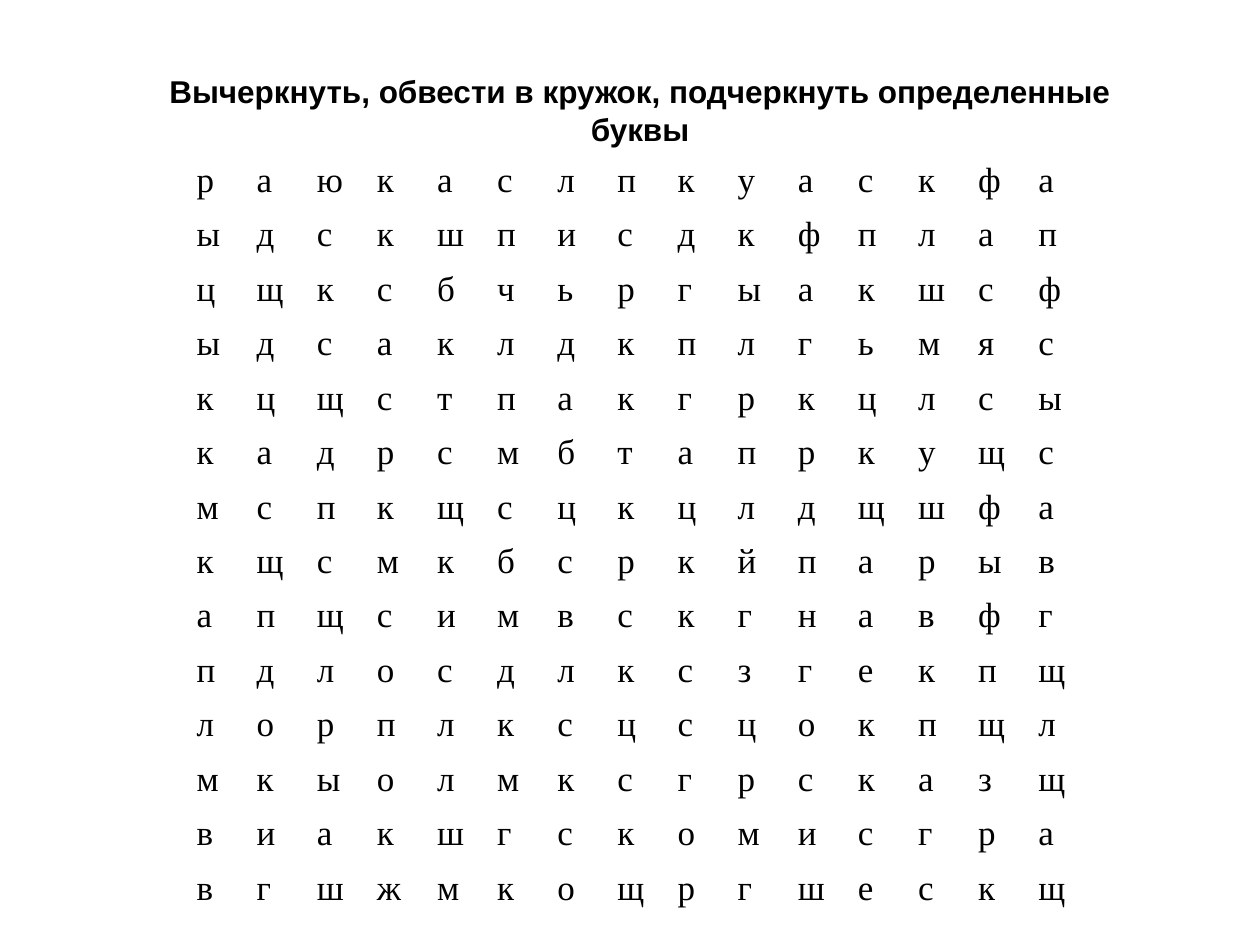
import pptx
import pptx.dml.color
import pptx.enum.text
import pptx.util

SLIDE_WIDTH = pptx.util.Inches(10)
SLIDE_HEIGHT = pptx.util.Inches(7.5)
COLUMN_WIDTH = pptx.util.Inches(7.16 / 15)
ROW_HEIGHT = pptx.util.Inches(6.05 / 14)
INK = "000000"

HEADING = "Вычеркнуть, обвести в кружок, подчеркнуть определенные буквы"
LETTER_ROWS = [
    "раюкаслпкуаскфа",
    "ыдскшписдкфплап",
    "цщксбчьргыакшсф",
    "ыдсаклдкплгьмяс",
    "кцщстпакгркцлсы",
    "кадрсмбтапркущс",
    "мспкщсцкцлдщшфа",
    "кщсмкбсркйпарыв",
    "апщсимвскгнавфг",
    "пдлосдлксзгекпщ",
    "лорплксцсцокпщл",
    "мкыолмксгрсказщ",
    "виакшгскомисгра",
    "вгшжмкощргшескщ",
]


def color(hex_value):
    return pptx.dml.color.RGBColor.from_string(hex_value)


def style_paragraph(paragraph, font_name, size, bold=False):
    paragraph.font.name = font_name
    paragraph.font.size = pptx.util.Pt(size)
    paragraph.font.bold = bold
    paragraph.font.color.rgb = color(INK)


def add_letter_grid(slide, left, top):
    row_count, column_count = len(LETTER_ROWS), len(LETTER_ROWS[0])
    letters = slide.shapes.add_table(
        row_count, column_count, left, top,
        COLUMN_WIDTH * column_count, ROW_HEIGHT * row_count,
    ).table
    letters.first_row = False
    letters.horz_banding = False
    for column in letters.columns:
        column.width = COLUMN_WIDTH
    for row, line in zip(letters.rows, LETTER_ROWS):
        row.height = ROW_HEIGHT
        for cell, letter in zip(row.cells, line):
            cell.text = letter
            cell.fill.background()
            style_paragraph(cell.text_frame.paragraphs[0], "Times New Roman", 20)


def add_heading(slide, left, top, width, height):
    heading = slide.shapes.add_textbox(left, top, width, height).text_frame
    heading.word_wrap = True
    heading.vertical_anchor = pptx.enum.text.MSO_ANCHOR.MIDDLE
    heading.text = HEADING
    paragraph = heading.paragraphs[0]
    paragraph.alignment = pptx.enum.text.PP_ALIGN.CENTER
    style_paragraph(paragraph, "Arial", 18, bold=True)


def main():
    presentation = pptx.Presentation()
    presentation.slide_width = SLIDE_WIDTH
    presentation.slide_height = SLIDE_HEIGHT
    slide = presentation.slides.add_slide(presentation.slide_layouts[6])
    add_letter_grid(slide, pptx.util.Inches(1.46), pptx.util.Inches(1.23))
    add_heading(
        slide, pptx.util.Inches(0.83), pptx.util.Inches(0.28),
        int(SLIDE_WIDTH * 0.85), pptx.util.Inches(1.18),
    )
    presentation.save("out.pptx")


if __name__ == "__main__":
    main()
